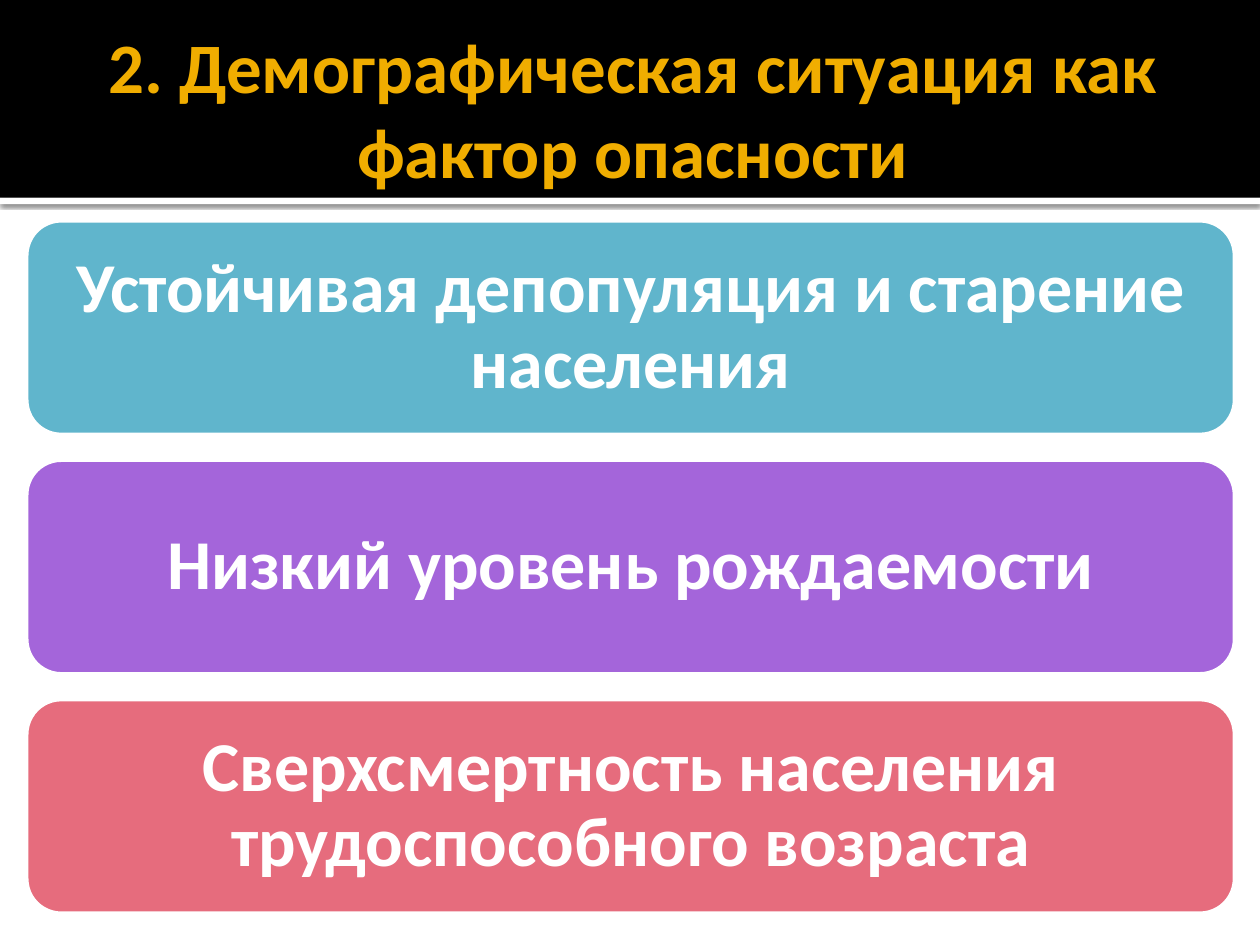
from lxml import etree
from pptx import Presentation
from pptx.dml.color import RGBColor
from pptx.enum.shapes import MSO_SHAPE as Shape
from pptx.enum.text import MSO_ANCHOR as Anchor, PP_ALIGN as Align
from pptx.oxml import parse_xml
from pptx.util import Inches, Pt

COLORS = {
    "white": "FFFFFF",
    "black": "000000",
    "gold": "F0AD00",
    "blue": "60B5CC",
    "purple": "A465DA",
    "rose": "E66C7D",
}


def add_block(kind, left, top, width, height, color):
    shape = slide.shapes.add_shape(
        kind, Inches(left), Inches(top), Inches(width), Inches(height))
    shape.shadow.inherit = False
    shape.fill.solid()
    shape.fill.fore_color.rgb = RGBColor.from_string(COLORS[color])
    shape.line.fill.background()
    return shape


def write_text(shape, text, size, color, margins):
    frame = shape.text_frame
    frame.word_wrap = True
    frame.vertical_anchor = Anchor.MIDDLE
    (frame.margin_left, frame.margin_top,
     frame.margin_right, frame.margin_bottom) = map(Inches, margins)
    paragraph = frame.paragraphs[0]
    paragraph.alignment = Align.CENTER
    run = paragraph.add_run()
    run.text = text
    run.font.name = "Calibri"
    run.font.size = Pt(size)
    run.font.bold = True
    run.font.color.rgb = RGBColor.from_string(COLORS[color])
    return paragraph


presentation = Presentation()
presentation.slide_width = Inches(10)
presentation.slide_height = Inches(7.5)
slide = presentation.slides.add_slide(presentation.slide_layouts[6])

# White strip with a soft shadow under the header
strip = add_block(Shape.RECTANGLE, 0, 1.57, 10, 0.05, "white")
effects = strip.shadow._element.find(
    "{http://schemas.openxmlformats.org/drawingml/2006/main}effectLst")
effects.append(parse_xml(
    '<a:outerShdw xmlns:a="http://schemas.openxmlformats.org/drawingml/2006/main"'
    f' blurRad="{Pt(2.5)}" dist="{Pt(0.8)}" dir="5400000" algn="tl" rotWithShape="0">'
    f'<a:srgbClr val="{COLORS["black"]}"><a:alpha val="60000"/></a:srgbClr>'
    '</a:outerShdw>'))

# Black header and title
add_block(Shape.RECTANGLE, 0, 0, 10, 1.57, "black")
title = slide.shapes.add_textbox(Inches(0.5), Inches(0.17), Inches(9), Inches(1.37))
write_text(title, "2. Демографическая ситуация как фактор опасности",
           40.5, "gold", (0.1, 0.05, 0.05, 0.05))

# Stack of threat cards
cards = [
    ("Устойчивая депопуляция и старение населения", "blue"),
    ("Низкий уровень рождаемости", "purple"),
    ("Сверхсмертность населения трудоспособного возраста", "rose"),
]
for index, (text, color) in enumerate(cards):
    card = add_block(Shape.ROUNDED_RECTANGLE, 0.2, 1.74 + index * 1.9, 9.61, 1.72, color)
    card.line.color.rgb = RGBColor.from_string(COLORS["white"])
    card.line.width = Pt(3.78)
    paragraph = write_text(card, text, 40, "white", (0.17,) * 4)
    paragraph.line_spacing = 0.9

presentation.save("out.pptx")
